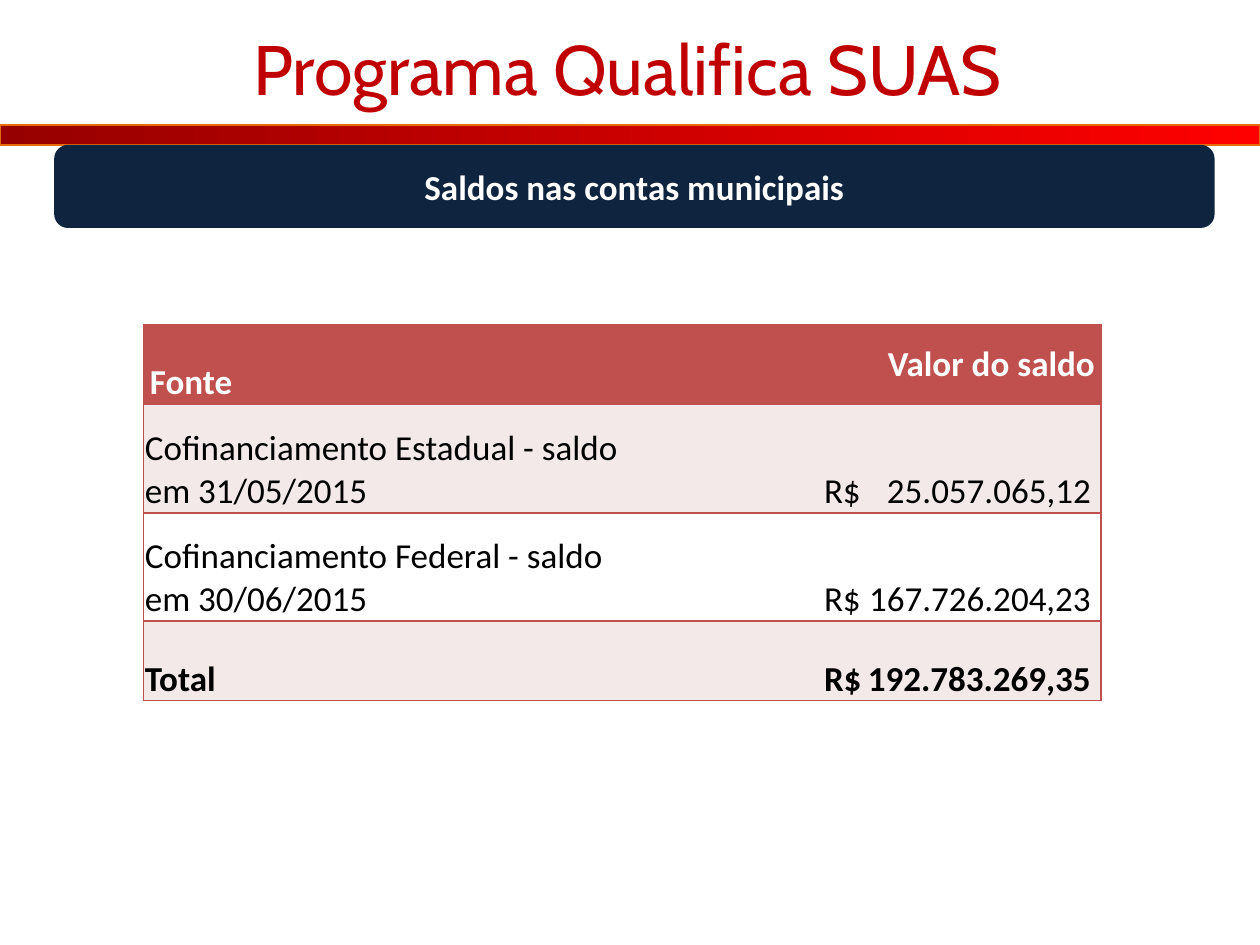
from dataclasses import dataclass

from lxml import etree
from pptx import Presentation
from pptx import util as u
from pptx.dml.color import RGBColor
from pptx.enum import shapes, text
from pptx.oxml import ns


@dataclass(frozen=True)
class Theme:
    """Colours, fonts and sizes of the slide."""
    title: str = "C00000"
    band_stops: tuple = ("970000", "FF0000")
    band_line: str = "E46C0A"
    navy: str = "0F243E"
    accent: str = "C0504D"
    tint: str = "F4E9E9"
    white: str = "FFFFFF"
    black: str = "000000"
    title_font: str = "Cabin"
    body_font: str = "Calibri"
    title_size: int = 40
    body_size: int = 20


THEME = Theme()
HEADER = ("Fonte", "Valor do saldo")
BALANCES = (
    ("Cofinanciamento Estadual - saldo em 31/05/2015", "25.057.065,12"),
    ("Cofinanciamento Federal - saldo em 30/06/2015", "167.726.204,23"),
    ("Total", "192.783.269,35"),
)


def rgb(code):
    """Turn a hex code into a colour."""
    return RGBColor.from_string(code)


def style(paragraph, color, size=THEME.body_size, name=THEME.body_font, bold=False):
    """Set the font of a paragraph."""
    font = paragraph.font
    font.name, font.size, font.bold = name, u.Pt(size), bold
    font.color.rgb = rgb(color)


def add_band(slide, left, top, width, height):
    """Draw the red gradient band under the title."""
    band = slide.shapes.add_shape(shapes.MSO_SHAPE.RECTANGLE, left, top, width, height)
    band.shadow.inherit = False
    band.fill.gradient()
    band.fill.gradient_angle = 0
    for stop, color in zip(band.fill.gradient_stops, THEME.band_stops):
        stop.color.rgb = rgb(color)
    band.line.color.rgb = rgb(THEME.band_line)
    band.line.width = u.Pt(1)


def add_title(slide, left, top, width, height):
    """Write the slide title."""
    frame = slide.shapes.add_textbox(left, top, width, height).text_frame
    frame.word_wrap = True
    frame.vertical_anchor = text.MSO_ANCHOR.MIDDLE
    title = frame.paragraphs[0]
    title.text = "Programa Qualifica SUAS"
    title.alignment = text.PP_ALIGN.CENTER
    style(title, THEME.title, THEME.title_size, THEME.title_font)


def add_subtitle(slide, left, top, width, height):
    """Draw the navy heading bar."""
    bar = slide.shapes.add_shape(shapes.MSO_SHAPE.ROUNDED_RECTANGLE, left, top, width, height)
    bar.shadow.inherit = False
    bar.fill.solid()
    bar.fill.fore_color.rgb = rgb(THEME.navy)
    bar.line.fill.background()
    bar.text_frame.vertical_anchor = text.MSO_ANCHOR.MIDDLE
    heading = bar.text_frame.paragraphs[0]
    heading.text = "Saldos nas contas municipais"
    heading.alignment = text.PP_ALIGN.CENTER
    style(heading, THEME.white, bold=True)


def set_borders(cell, open_side):
    """Rule every side of a cell except the open one."""
    properties = cell._tc.get_or_add_tcPr()
    for index, side in enumerate(("lnL", "lnR", "lnT", "lnB")):
        line = etree.Element(ns.qn(f"a:{side}"), w=str(u.Pt(1)))
        if side == open_side:
            etree.SubElement(line, ns.qn("a:noFill"))
        else:
            fill = etree.SubElement(line, ns.qn("a:solidFill"))
            etree.SubElement(fill, ns.qn("a:srgbClr"), val=THEME.accent)
        properties.insert(index, line)


def add_right_tab(paragraph, position):
    """Add a right-aligned tab stop to a paragraph."""
    tabs = etree.SubElement(paragraph._p.get_or_add_pPr(), ns.qn("a:tabLst"))
    etree.SubElement(tabs, ns.qn("a:tab"), pos=str(position), algn="r")


def fill_cell(cell, words, fill, color, bold, inset, column):
    """Write and colour one table cell."""
    cell.fill.solid()
    cell.fill.fore_color.rgb = rgb(fill)
    set_borders(cell, ("lnR", "lnL")[column])
    cell.margin_left = cell.margin_right = inset
    cell.margin_top = cell.margin_bottom = 0
    cell.vertical_anchor = text.MSO_ANCHOR.BOTTOM
    paragraph = cell.text_frame.paragraphs[0]
    paragraph.text = words
    if "\t" in words:
        cell.margin_left = u.Inches(1.56)
        add_right_tab(paragraph, u.Inches(2.12))
    style(paragraph, color, bold=bold)


def add_balances(slide, left, top, width, height):
    """Build the table of balances by funding source."""
    rows = len(BALANCES) + 1
    table = slide.shapes.add_table(rows, 2, left, top, width, height).table
    table.first_row = table.horz_banding = False
    table.columns[0].width = u.Inches(3.84)
    table.columns[1].width = width - table.columns[0].width
    for row, inches in zip(table.rows, (0.63, 0.86, 0.86, 0.63)):
        row.height = u.Inches(inches)
    for column, words in enumerate(HEADER):
        fill_cell(table.cell(0, column), words, THEME.accent, THEME.white, True,
                  u.Inches(0.05), column)
    amount_header = table.cell(0, 1)
    amount_header.vertical_anchor = text.MSO_ANCHOR.MIDDLE
    amount_header.text_frame.paragraphs[0].alignment = text.PP_ALIGN.RIGHT
    for row, (source, amount) in enumerate(BALANCES, 1):
        fill = THEME.tint if row % 2 else THEME.white
        for column, words in enumerate((source, f"R$\t{amount}")):
            fill_cell(table.cell(row, column), words, fill, THEME.black,
                      source == "Total", u.Inches(0.01), column)


def main():
    """Build and save the slide."""
    deck = Presentation()
    deck.slide_width, deck.slide_height = u.Inches(10), u.Inches(7.5)
    slide = deck.slides.add_slide(deck.slide_layouts[6])
    regions = (
        (add_band, (0, 0.99, 10, 0.16)),
        (add_title, (0, -0.27, 9.96, 1.61)),
        (add_subtitle, (0.43, 1.15, 9.21, 0.66)),
        (add_balances, (1.14, 2.58, 7.6, 2.98)),
    )
    for add_region, box in regions:
        add_region(slide, *map(u.Inches, box))
    deck.save("out.pptx")


if __name__ == "__main__":
    main()
